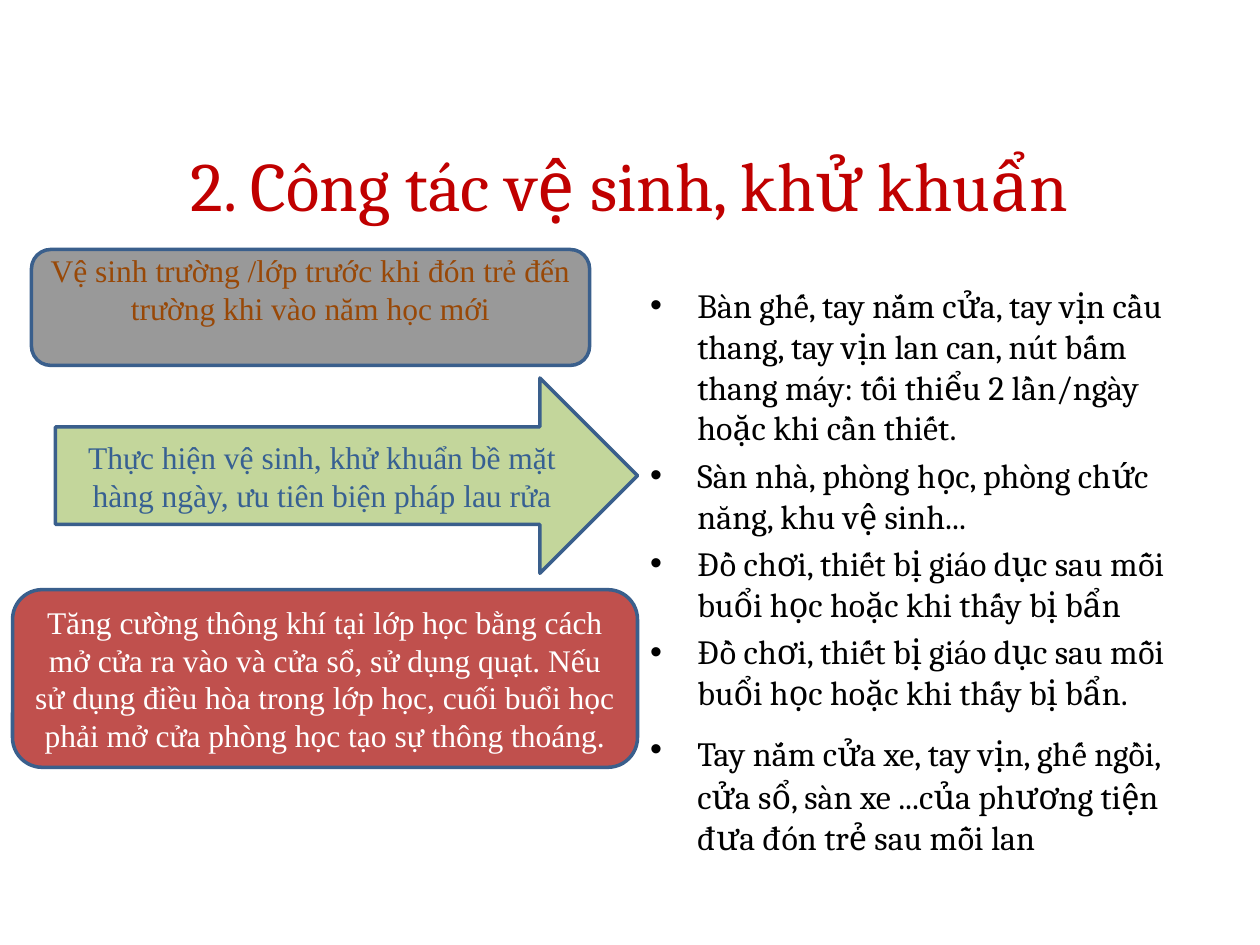
from pptx import Presentation
from pptx.dml.color import RGBColor
from pptx.enum.shapes import MSO_SHAPE
from pptx.enum.text import MSO_ANCHOR, MSO_AUTO_SIZE, PP_ALIGN
from pptx.util import Inches, Pt

ROUNDED = MSO_SHAPE.ROUNDED_RECTANGLE
ARROW = MSO_SHAPE.RIGHT_ARROW
MIDDLE = MSO_ANCHOR.MIDDLE
TOP = MSO_ANCHOR.TOP
CENTER = PP_ALIGN.CENTER
NO_AUTOFIT = MSO_AUTO_SIZE.NONE

COLORS = {
    "title": "C00000", "body": "000000", "outline": "3A5F8C",
    "gray": "999999", "brown": "984807", "green": "C3D69B",
    "blue": "376092", "red": "C0504D", "white": "FFFFFF",
}
HEADING_FONT = "Cambria"
CALLOUT_FONT = "Times New Roman"

SURFACES = [
    ["Bàn ghế, tay nắm cửa, tay vịn cầu thang, tay vịn lan can, nút bấm thang máy: "
     "tối thiểu 2 lần/ngày hoặc khi cần thiết."],
    ["Sàn nhà, phòng học, phòng chức năng, khu vệ sinh..."],
    ["Đồ chơi, thiết bị giáo dục sau mỗi buổi học hoặc khi thấy bị bẩn"],
    ["Đồ chơi, thiết bị giáo dục sau mỗi buổi học hoặc khi thấy bị bẩn."],
    ["Tay nắm cửa xe, tay vịn, ghế ngồi,", " ",
     "cửa sổ, sàn xe ...của phương tiện đưa đón trẻ sau mỗi lan"],
]

CALLOUTS = [
    (ROUNDED, (0.25, 1.98, 4.43, 0.92), "gray", "brown", 0.34,
     "Vệ sinh trường /lớp trước khi đón trẻ đến trường khi vào năm học mới"),
    (ARROW, (0.44, 3, 4.62, 1.55), "green", "blue", 0.05,
     "Thực hiện vệ sinh, khử khuẩn bề mặt hàng ngày, ưu tiên biện pháp lau rửa"),
    (ROUNDED, (0.1, 4.68, 4.96, 1.41), "red", "white", 0.05,
     "Tăng cường thông khí tại lớp học bằng cách mở cửa ra vào và cửa sổ, sử dụng quạt. "
     "Nếu sử dụng điều hòa trong lớp học, cuối buổi học phải mở cửa phòng học "
     "tạo sự thông thoáng."),
]


def color(name):
    """Return the named colour of the palette."""
    return RGBColor.from_string(COLORS[name])


def place(shape, box):
    """Move a shape to a box given in inches."""
    shape.left, shape.top, shape.width, shape.height = map(Inches, box)


def set_font(font, name, size, color_name):
    """Set the face, size and colour of a font."""
    font.name = name
    font.size = Pt(size)
    font.color.rgb = color(color_name)


def fill_title(title, box):
    """Write the slide title in its placeholder."""
    place(title, box)
    frame = title.text_frame
    frame.text = "2. Công tác vệ sinh, khử khuẩn"
    frame.auto_size = NO_AUTOFIT
    frame.vertical_anchor = MIDDLE
    paragraph = frame.paragraphs[0]
    paragraph.alignment = CENTER
    set_font(paragraph.font, HEADING_FONT, 39.6, "title")


def fill_surfaces(body, box):
    """List the surfaces to clean in the body placeholder."""
    place(body, box)
    frame = body.text_frame
    frame.auto_size = NO_AUTOFIT
    frame.vertical_anchor = TOP
    frame.margin_top = Inches(0.53)
    for index, parts in enumerate(SURFACES):
        paragraph = frame.add_paragraph() if index else frame.paragraphs[0]
        set_font(paragraph.font, HEADING_FONT, 19.4, "body")
        for part in parts:
            run = paragraph.add_run()
            run.text = part
            if part == " ":
                run.font.size = Pt(25.9)


def add_callout(slide, preset, box, fill, text_color, bottom_margin, text):
    """Add one outlined callout with centred text."""
    shape = slide.shapes.add_shape(preset, *map(Inches, box))
    shape.shadow.inherit = False
    shape.fill.solid()
    shape.fill.fore_color.rgb = color(fill)
    shape.line.color.rgb = color("outline")
    shape.line.width = Pt(2)
    frame = shape.text_frame
    frame.word_wrap = True
    frame.vertical_anchor = MIDDLE
    frame.margin_bottom = Inches(bottom_margin)
    frame.text = text
    paragraph = frame.paragraphs[0]
    paragraph.alignment = CENTER
    set_font(paragraph.font, CALLOUT_FONT, 18, text_color)


def main():
    """Build and save the hygiene slide."""
    presentation = Presentation()
    presentation.slide_width = Inches(10)
    presentation.slide_height = Inches(7.5)
    slide = presentation.slides.add_slide(presentation.slide_layouts[1])
    fill_title(slide.shapes.title, (0.87, 1.19, 8.25, 0.53))
    fill_surfaces(slide.placeholders[1], (5.06, 1.73, 4.51, 4.41))
    for callout in CALLOUTS:
        add_callout(slide, *callout)
    presentation.save("out.pptx")


if __name__ == "__main__":
    main()
